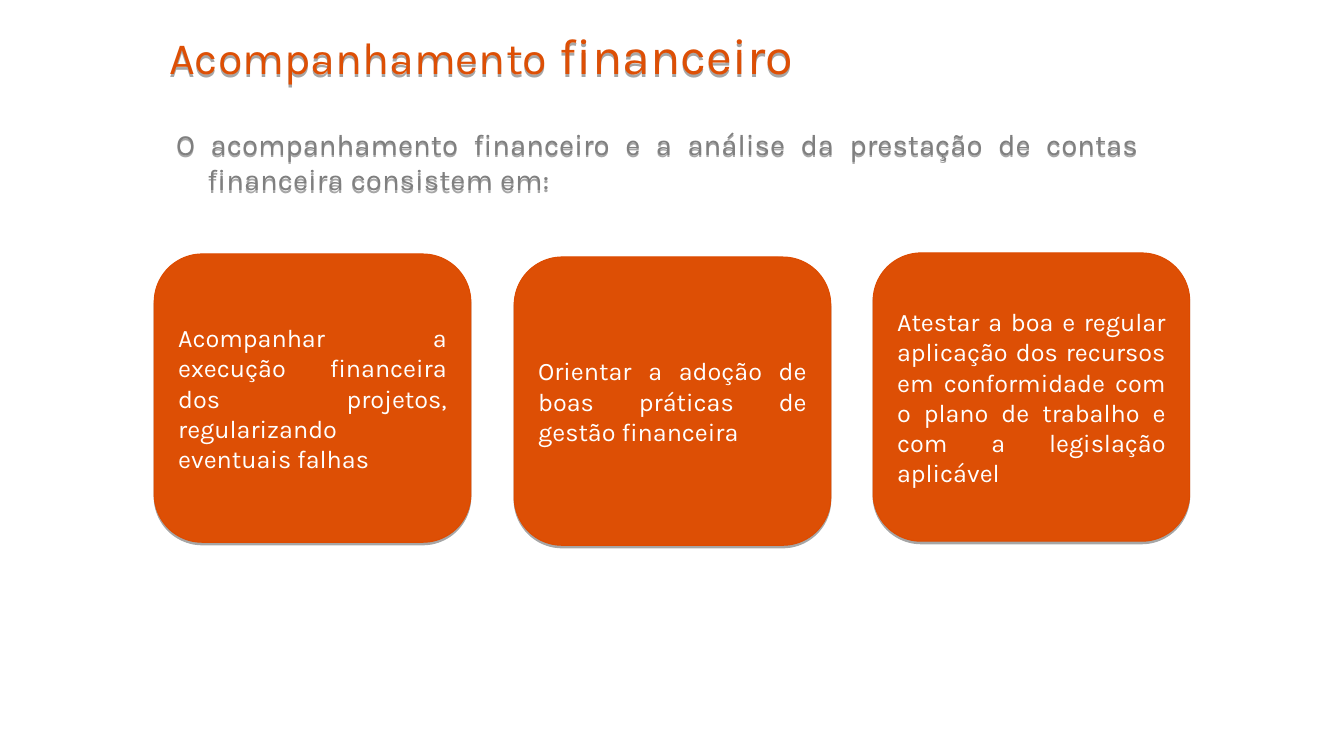
import lxml.etree
import pptx
import pptx.dml.color
import pptx.enum.shapes
import pptx.enum.text
import pptx.oxml.ns
import pptx.util

SCALE = 9144
FONT = "Karla"
ORANGE, BORDER, GRAY, WHITE = "DD4F05", "DD4B00", "7F7F7F", "FFFFFF"
JUSTIFY = pptx.enum.text.PP_ALIGN.JUSTIFY
CARD_SIZE = (314, 286)
CARDS = [
    (153, 252, "Acompanhar a execução financeira dos projetos, regularizando eventuais falhas"),
    (510, 255, "Orientar a adoção de boas práticas de gestão financeira"),
    (866, 251, "Atestar a boa e regular aplicação dos recursos em conformidade com "
               "o plano de trabalho e com a legislação aplicável"),
]


def px(*lengths):
    """Turn pixel lengths into EMU."""
    return [pptx.util.Emu(length * SCALE) for length in lengths]


def color(value):
    """Turn a hex string into a colour."""
    return pptx.dml.color.RGBColor.from_string(value)


def add_shadow(shape):
    """Give a shape a soft gray shadow directly below it."""
    shape.shadow.inherit = False
    effects = shape.element.spPr.find(pptx.oxml.ns.qn("a:effectLst"))
    shadow = lxml.etree.SubElement(
        effects, pptx.oxml.ns.qn("a:outerShdw"),
        blurRad="0", dist="22860", dir="5400000", rotWithShape="0")
    black = lxml.etree.SubElement(shadow, pptx.oxml.ns.qn("a:srgbClr"), val="000000")
    lxml.etree.SubElement(black, pptx.oxml.ns.qn("a:alpha"), val="35000")


def add_run(paragraph, text, size, hex_color):
    """Append one styled run to a paragraph."""
    run = paragraph.add_run()
    run.text = text
    run.font.name = FONT
    run.font.size = pptx.util.Pt(size)
    run.font.color.rgb = color(hex_color)


def add_text_box(slide, box):
    """Add a wrapping, shadowed text box and return its paragraph."""
    shape = slide.shapes.add_textbox(*px(*box))
    shape.text_frame.word_wrap = True
    add_shadow(shape)
    return shape.text_frame.paragraphs[0]


def add_title(slide, box):
    """Add the title in two sizes."""
    paragraph = add_text_box(slide, box)
    add_run(paragraph, "Acompanhamento", 32, ORANGE)
    add_run(paragraph, " financeiro", 36, ORANGE)


def add_introduction(slide, box):
    """Add the justified introduction with a hanging indent."""
    paragraph = add_text_box(slide, box)
    paragraph.alignment = JUSTIFY
    margin, indent = px(81, -31)
    properties = paragraph._p.get_or_add_pPr()
    properties.set("marL", str(margin))
    properties.set("indent", str(indent))
    add_run(paragraph, "O acompanhamento financeiro e a análise da prestação de contas "
                       "financeira consistem em:", 21, GRAY)


def add_card(slide, box, text):
    """Add one rounded card with justified text."""
    shape = slide.shapes.add_shape(
        pptx.enum.shapes.MSO_SHAPE.ROUNDED_RECTANGLE, *px(*box))
    shape.fill.solid()
    shape.fill.fore_color.rgb = color(ORANGE)
    shape.line.color.rgb = color(BORDER)
    shape.line.width = pptx.util.Pt(0.75)
    add_shadow(shape)
    frame = shape.text_frame
    frame.word_wrap = True
    frame.vertical_anchor = pptx.enum.text.MSO_ANCHOR.MIDDLE
    paragraph = frame.paragraphs[0]
    paragraph.alignment = JUSTIFY
    add_run(paragraph, text, 18, WHITE)


def main():
    """Build and save the slide."""
    presentation = pptx.Presentation()
    presentation.slide_width, presentation.slide_height = px(1333, 750)
    slide = presentation.slides.add_slide(presentation.slide_layouts[6])
    add_title(slide, (158, 19, 675, 73))
    add_introduction(slide, (115, 120, 1024, 575))
    for left, top, text in CARDS:
        add_card(slide, (left, top, *CARD_SIZE), text)
    presentation.save("out.pptx")


if __name__ == "__main__":
    main()
